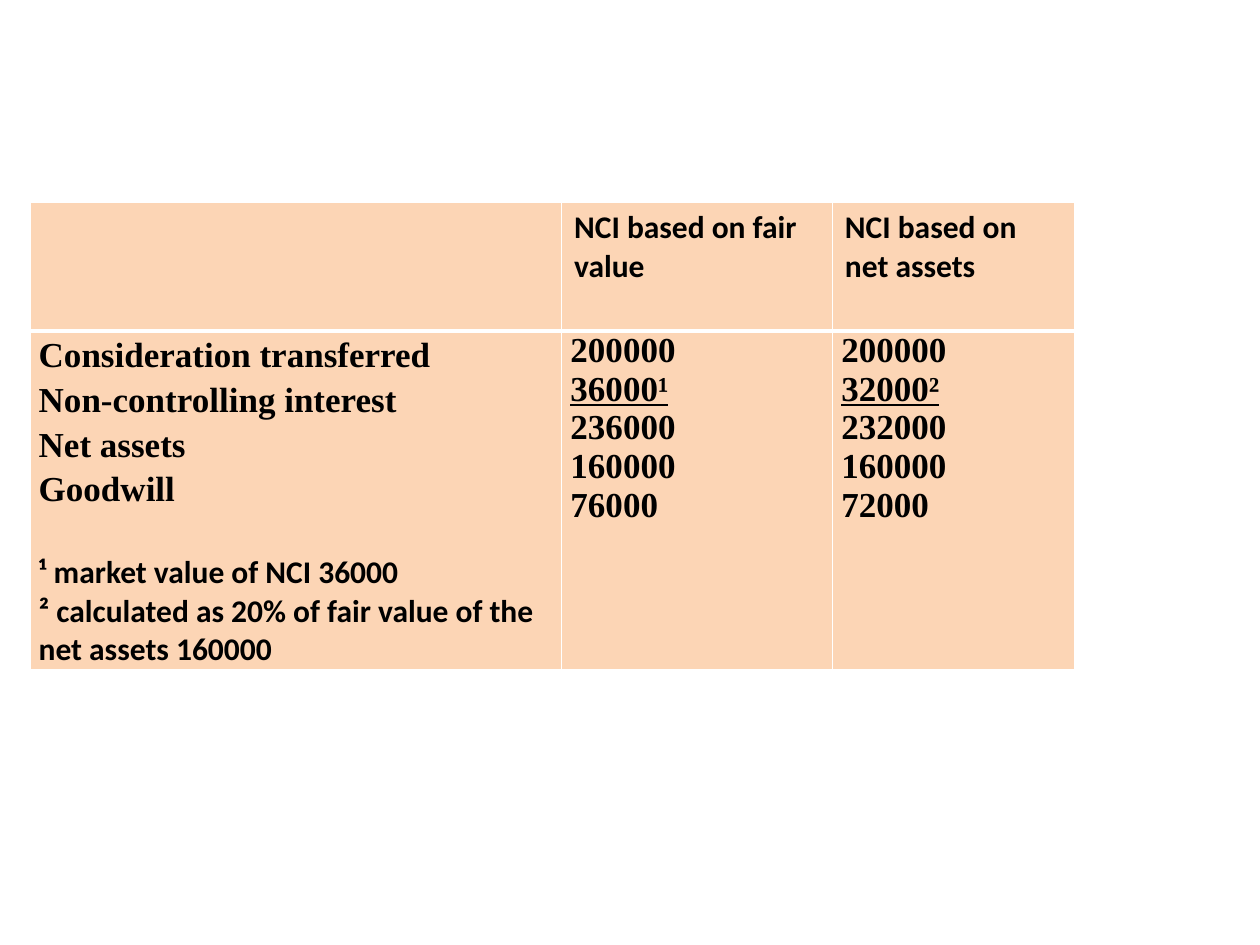
from dataclasses import dataclass

from lxml import etree
from pptx import Presentation
from pptx.dml.color import RGBColor
from pptx.oxml.ns import qn
from pptx.util import Cm, Pt


@dataclass(frozen=True)
class Theme:
    fill: RGBColor = RGBColor(0xFC, 0xD5, 0xB5)
    text: RGBColor = RGBColor(0, 0, 0)
    border: str = "FFFFFF"
    thin: int = Pt(1)
    thick: int = Pt(3)
    label_font: str = "Calibri"
    label_size: int = Pt(18)
    entry_font: str = "Times New Roman"
    entry_size: int = Pt(20)


THEME = Theme()
LABEL = {"name": THEME.label_font, "size": THEME.label_size}
ENTRY = {"name": THEME.entry_font, "size": THEME.entry_size}
UNDERLINED = {**ENTRY, "underline": True}
LOOSE = {"line_spacing": 1.15}
NOTE_GAP = {"space_before": Pt(25.4)}

COLUMN_WIDTHS = (10.72, 5.46, 4.88)
ROW_HEIGHTS = (2.59, 6.22)

HEADINGS = ("", "NCI based on fair value", "NCI based on net assets")
ITEMS = ("Consideration transferred", "Non-controlling interest",
         "Net assets", "Goodwill")
NOTES = ("¹ market value of NCI 36000",
         "² calculated as 20% of fair value of the net assets 160000")
FAIR_VALUE = ("200000", "36000¹", "236000", "160000", "76000")
NET_ASSETS = ("200000", "32000²", "232000", "160000", "72000")


def apply_format(target, values):
    for name, value in values.items():
        setattr(target, name, value)


def write_cell(cell, lines):
    """Fill a cell with (text, font format, paragraph format) lines."""
    frame = cell.text_frame
    for index, (text, font_format, para_format) in enumerate(lines):
        para = frame.add_paragraph() if index else frame.paragraphs[0]
        apply_format(para, para_format)
        span = para.add_run()
        span.text = text
        apply_format(span.font, {**font_format, "bold": True})
        span.font.color.rgb = THEME.text


def style_cell(cell, thick_edge):
    cell.fill.solid()
    cell.fill.fore_color.rgb = THEME.fill
    properties = cell._tc.get_or_add_tcPr()
    for index, edge in enumerate(("lnL", "lnR", "lnT", "lnB")):
        line = etree.Element(qn(f"a:{edge}"))
        line.set("w", str(THEME.thick if edge == thick_edge else THEME.thin))
        solid = etree.SubElement(line, qn("a:solidFill"))
        etree.SubElement(solid, qn("a:srgbClr")).set("val", THEME.border)
        properties.insert(index, line)


def amount_lines(amounts):
    """Underline the second amount, which closes the sum."""
    return [(amount, UNDERLINED if index == 1 else ENTRY, {})
            for index, amount in enumerate(amounts)]


def add_goodwill_table(page, left, top):
    table = page.shapes.add_table(
        len(ROW_HEIGHTS), len(COLUMN_WIDTHS), Cm(left), Cm(top),
        Cm(sum(COLUMN_WIDTHS)), Cm(sum(ROW_HEIGHTS))).table
    apply_format(table, {"first_row": False, "horz_banding": False})
    for column, width in zip(table.columns, COLUMN_WIDTHS):
        column.width = Cm(width)
    for row, height in zip(table.rows, ROW_HEIGHTS):
        row.height = Cm(height)

    item_lines = [(item, ENTRY, LOOSE) for item in ITEMS]
    item_lines += [(note, LABEL, {} if index else NOTE_GAP)
                   for index, note in enumerate(NOTES)]
    bodies = (item_lines, amount_lines(FAIR_VALUE), amount_lines(NET_ASSETS))
    margins = {"margin_left": Cm(0.18), "margin_right": Cm(0.18),
               "margin_top": 0, "margin_bottom": 0}

    for column, (heading, body) in enumerate(zip(HEADINGS, bodies)):
        head_cell, body_cell = table.cell(0, column), table.cell(1, column)
        if heading:
            write_cell(head_cell, [(heading, LABEL, {})])
        style_cell(head_cell, "lnB")
        apply_format(body_cell, margins)
        write_cell(body_cell, body)
        style_cell(body_cell, "lnT")


def main():
    deck = Presentation()
    deck.slide_width, deck.slide_height = Cm(25.4), Cm(19.05)
    page = deck.slides.add_slide(deck.slide_layouts[6])
    add_goodwill_table(page, 0.6, 4.08)
    deck.save("out.pptx")


if __name__ == "__main__":
    main()
